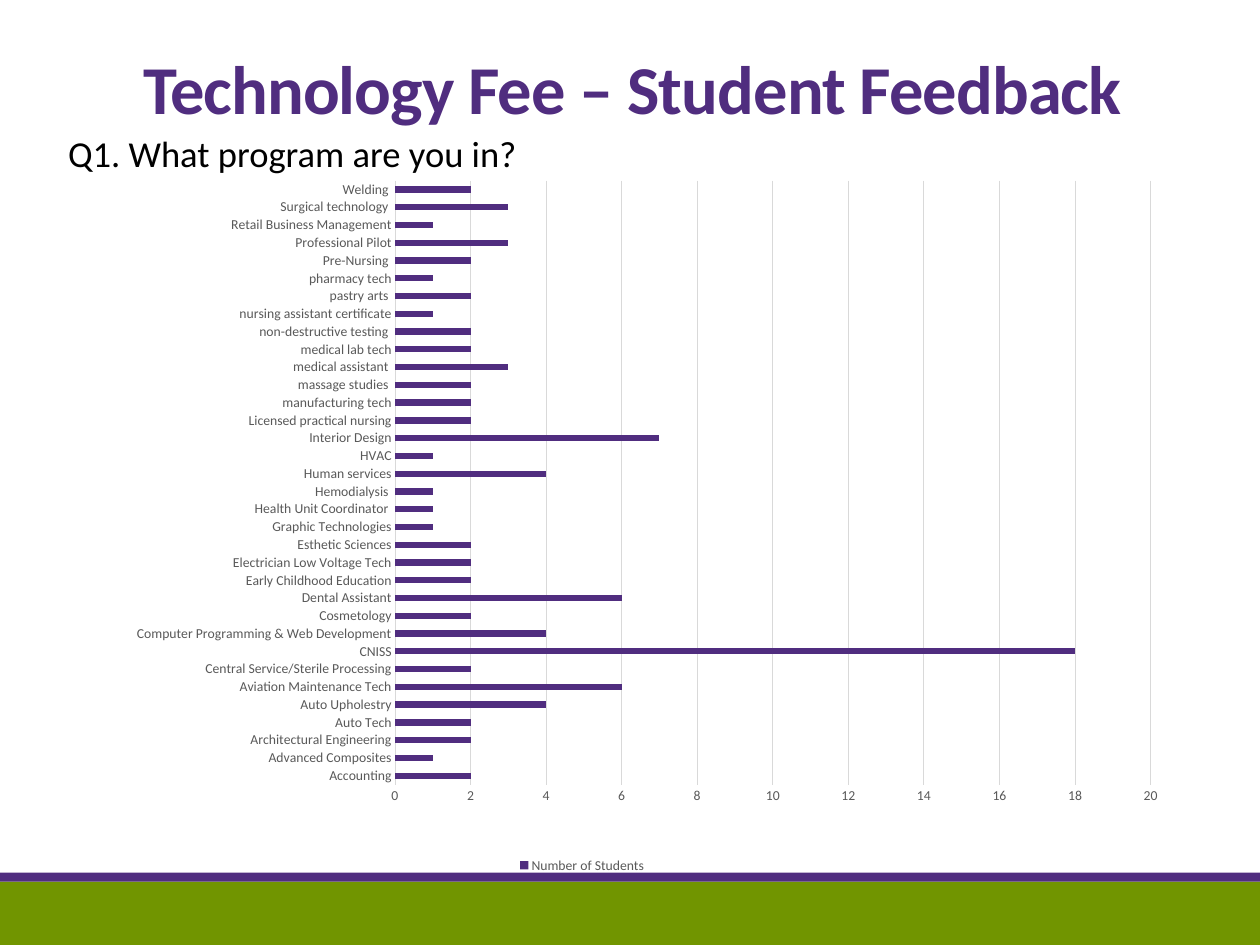
from pptx import Presentation
from pptx.chart.data import CategoryChartData as Data
from pptx.dml.color import RGBColor
from pptx.enum.chart import XL_CHART_TYPE as Kind, XL_LEGEND_POSITION as Spot, XL_TICK_MARK as Tick
from pptx.enum.shapes import MSO_SHAPE as Form
from pptx.enum.text import MSO_ANCHOR as Anchor, MSO_AUTO_SIZE as Fit, PP_ALIGN as Align
from pptx.oxml import parse_xml
from pptx.oxml.ns import nsdecls, qn
from pptx.util import Inches, Pt

PURPLE = RGBColor(0x50, 0x2D, 0x7F)
GREEN = RGBColor(0x71, 0x95, 0x00)
BLACK = RGBColor(0, 0, 0)
GRAY = RGBColor(0x59, 0x59, 0x59)
PALE = RGBColor(0xD9, 0xD9, 0xD9)

COUNTS = {
    "Accounting": 2,
    "Advanced Composites": 1,
    "Architectural Engineering": 2,
    "Auto Tech": 2,
    "Auto Upholestry": 4,
    "Aviation Maintenance Tech": 6,
    "Central Service/Sterile Processing": 2,
    "CNISS": 18,
    "Computer Programming & Web Development": 4,
    "Cosmetology": 2,
    "Dental Assistant": 6,
    "Early Childhood Education": 2,
    "Electrician Low Voltage Tech": 2,
    "Esthetic Sciences": 2,
    "Graphic Technologies": 1,
    "Health Unit Coordinator ": 1,
    "Hemodialysis ": 1,
    "Human services": 4,
    "HVAC": 1,
    "Interior Design": 7,
    "Licensed practical nursing": 2,
    "manufacturing tech": 2,
    "massage studies ": 2,
    "medical assistant ": 3,
    "medical lab tech": 2,
    "non-destructive testing ": 2,
    "nursing assistant certificate": 1,
    "pastry arts ": 2,
    "pharmacy tech": 1,
    "Pre-Nursing ": 2,
    "Professional Pilot": 3,
    "Retail Business Management": 1,
    "Surgical technology ": 3,
    "Welding ": 2,
}


def style(font, size, color, bold=False):
    """Set the face, size, colour and weight of a font."""
    font.name, font.size, font.bold = "Calibri", Pt(size), bold
    font.color.rgb = color


def write(frame, text, size, color, bold=False, lead=1, before=0, after=0,
          track=0, anchor=Anchor.TOP, inset=0.1):
    """Fill a text frame with one left-aligned paragraph without a bullet."""
    frame.word_wrap, frame.auto_size = True, Fit.NONE
    frame.vertical_anchor = anchor
    frame.margin_left = frame.margin_right = Inches(inset)
    frame.margin_top = frame.margin_bottom = Inches(0.05)
    para = frame.paragraphs[0]
    para.alignment, para.line_spacing = Align.LEFT, lead
    para.space_before, para.space_after = Pt(before), Pt(after)
    props = para._p.get_or_add_pPr()
    props.set("marL", "0")
    props.set("indent", "0")
    props.append(parse_xml(f"<a:buNone {nsdecls('a')}/>"))
    run = para.add_run()
    run.text = text
    style(run.font, size, color, bold)
    run.font._element.set("spc", str(round(track * 100)))


class Deck:
    """Hold the current slide and place elements by percent of its size."""

    def __init__(self, wide, high):
        """Open a deck with one title-and-content slide."""
        self.prs = Presentation()
        self.prs.slide_width, self.prs.slide_height = Inches(wide), Inches(high)
        self.slide = self.prs.slides.add_slide(self.prs.slide_layouts[1])

    def box(self, x, y, w, h):
        """Turn percent of the slide into lengths."""
        wide, high = self.prs.slide_width, self.prs.slide_height
        return [round(part * full / 100)
                for part, full in zip((x, y, w, h), (wide, high) * 2)]

    def fill(self, index, area, text, **form):
        """Move a placeholder and write its text."""
        holder = self.slide.placeholders[index]
        holder.left, holder.top, holder.width, holder.height = self.box(*area)
        write(holder.text_frame, text, **form)

    def band(self, y, h, color):
        """Draw a plain band across the slide."""
        shape = self.slide.shapes.add_shape(Form.RECTANGLE, *self.box(0, y, 100, h))
        shape.shadow.inherit = False
        shape.fill.solid()
        shape.fill.fore_color.rgb = color
        shape.line.fill.background()

    def bars(self, area, name, counts, color, plot):
        """Draw a bar chart with its plot at percent of the chart's size."""
        data = Data()
        data.categories = list(counts)
        data.add_series(name, list(counts.values()))
        chart = self.slide.shapes.add_chart(
            Kind.BAR_CLUSTERED, *self.box(*area), data).chart
        style(chart.font, 10, BLACK)
        chart.has_title = False
        chart.has_legend = True
        chart.legend.position = Spot.BOTTOM
        chart.legend.include_in_layout = False
        style(chart.legend.font, 12, GRAY)
        group = chart.plots[0]
        group.gap_width, group.vary_by_categories = 182, False
        series = group.series[0]
        series.format.fill.solid()
        series.format.fill.fore_color.rgb = color
        cats, vals = chart.category_axis, chart.value_axis
        for axis in (cats, vals):
            axis.major_tick_mark = axis.minor_tick_mark = Tick.NONE
            style(axis.tick_labels.font, 12, GRAY)
        vals.minimum_scale, vals.maximum_scale, vals.major_unit = 0, 20, 2
        vals.has_major_gridlines = True
        vals.format.line.fill.background()
        for line in (cats.format.line, vals.major_gridlines.format.line):
            line.color.rgb, line.width = PALE, Pt(0.75)
        self.lay(chart, plot)

    def lay(self, chart, plot):
        """Fix the inner plot area of a chart."""
        root = chart.element.find(".//" + qn("c:plotArea"))
        for old in root.findall(qn("c:layout")):
            root.remove(old)
        modes = "".join(f'<c:{key}Mode val="edge"/>' for key in "xy")
        spots = "".join(f'<c:{key} val="{part / 100}"/>'
                        for key, part in zip("xywh", plot))
        root.insert(0, parse_xml(
            f'<c:layout {nsdecls("c")}><c:manualLayout>'
            f'<c:layoutTarget val="inner"/>{modes}{spots}'
            '</c:manualLayout></c:layout>'))


def main():
    """Build and save the slide."""
    deck = Deck(15.33, 11.5)
    deck.band(93.3, 6.7, GREEN)
    deck.band(92.35, 0.95, PURPLE)
    deck.fill(0, (10.7, 1.74, 82.5, 12.26), "Technology Fee – Student Feedback",
              size=60, color=PURPLE, bold=True, lead=0.85, track=-0.8,
              anchor=Anchor.BOTTOM)
    deck.fill(1, (5.4, 14, 68, 13.57), "Q1. What program are you in?",
              size=32, color=BLACK, lead=0.9, before=18.4, after=3.1, inset=0)
    deck.bars((-1.1, 6.52, 94.6, 86.26), "Number of Students", COUNTS, PURPLE,
              plot=(34.3, 14.6, 63.4, 74.1))
    deck.prs.save("out.pptx")


if __name__ == "__main__":
    main()
